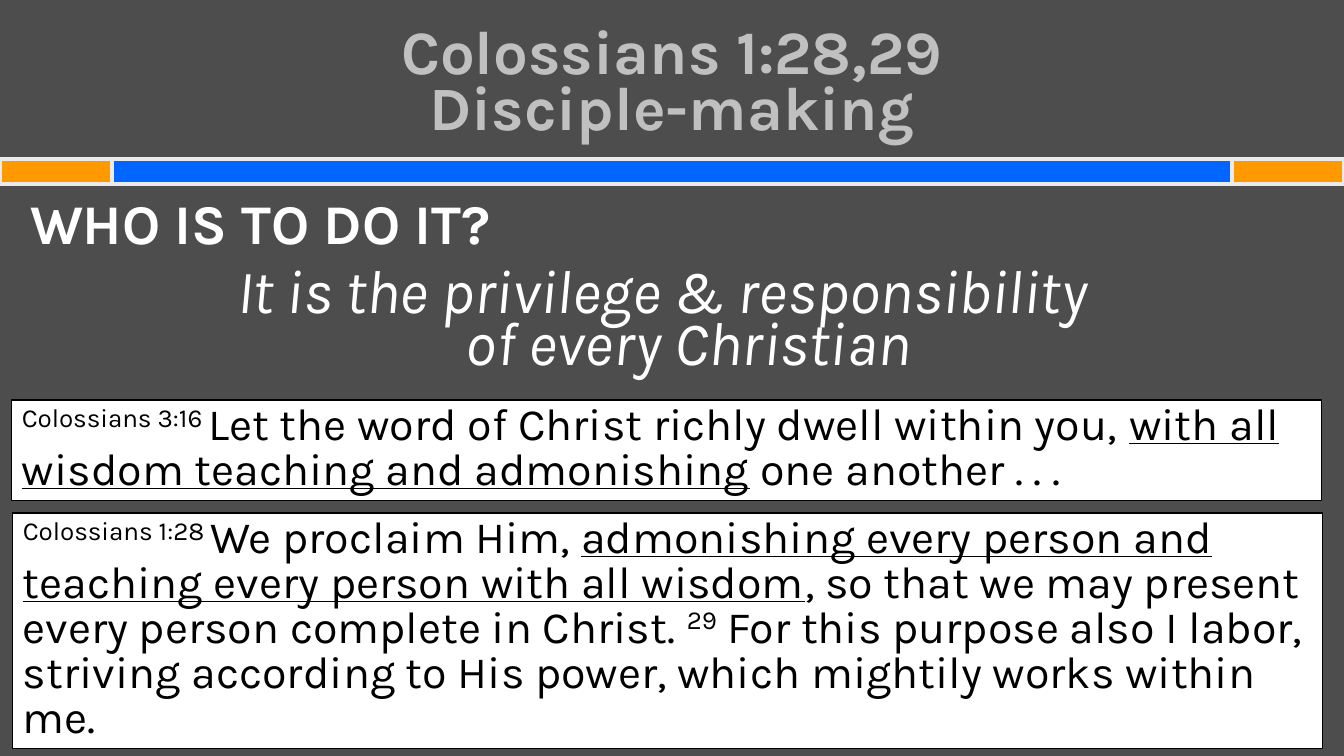
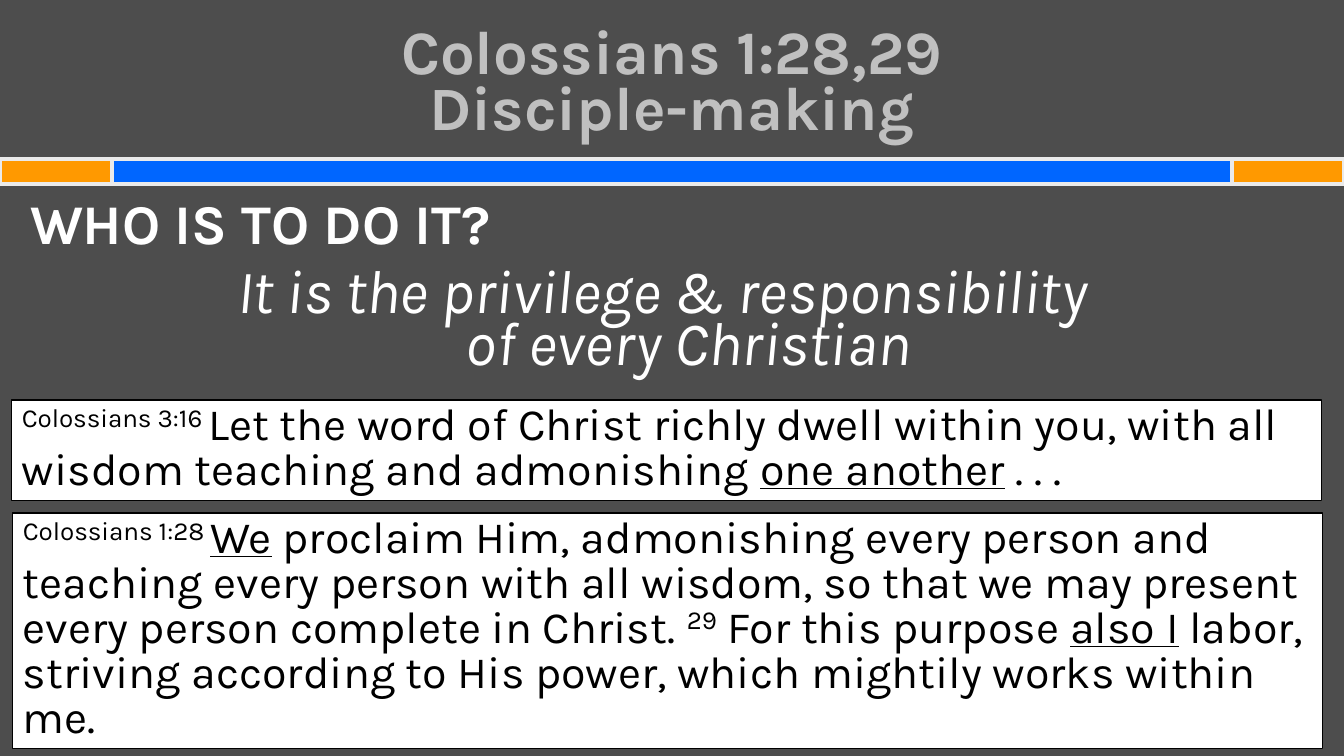
"""Build two slides about who is to make disciples, from Colossians."""
from dataclasses import dataclass

from lxml import etree
from pptx import Presentation
from pptx.dml.color import RGBColor
from pptx.enum.shapes import MSO_SHAPE
from pptx.enum.text import MSO_ANCHOR, MSO_AUTO_SIZE, PP_ALIGN
from pptx.oxml.ns import qn
from pptx.util import Emu, Pt

RECTANGLE = MSO_SHAPE.RECTANGLE
LEFT, CENTER = PP_ALIGN.LEFT, PP_ALIGN.CENTER
TOP, MIDDLE = MSO_ANCHOR.TOP, MSO_ANCHOR.MIDDLE
NO_FIT, GROW = MSO_AUTO_SIZE.NONE, MSO_AUTO_SIZE.SHAPE_TO_FIT_TEXT

EMU_PER_PX = 914400 / 100.8
SLIDE_WIDTH, SLIDE_HEIGHT = 1344, 756
FONT = "Karla"
GREY, SILVER, PALE = "4D4D4D", "C0C0C0", "EAEAEA"
BLUE, ORANGE = "0066FF", "FF9900"
WHITE, BLACK = "FFFFFF", "000000"
CORNER_WIDTH = 112
HANGING = 38


@dataclass(frozen=True)
class Box:
    left: int
    top: int
    width: int
    height: int


@dataclass(frozen=True)
class Line:
    text: str
    size: int
    align: PP_ALIGN
    bold: bool = False
    italic: bool = False


@dataclass(frozen=True)
class Span:
    text: str
    underline: bool = False
    raised: bool = False


@dataclass(frozen=True)
class Band:
    box: Box
    fill: str


@dataclass(frozen=True)
class Verse:
    box: Box
    spans: tuple[Span, ...]


TITLE = "Colossians 1:28,29\nDisciple-making"
TITLE_BOX = Box(67, 30, 1210, 113)
BODY_BOX = Box(20, 202, 1299, 537)
BODY = (
    Line("WHO IS TO DO IT?", 40, LEFT, bold=True),
    Line("It is the privilege & responsibility \nof every Christian", 44, CENTER, italic=True),
)
BANDS = (
    Band(Box(0, 159, SLIDE_WIDTH, 25), BLUE),
    Band(Box(0, 159, CORNER_WIDTH, 25), ORANGE),
    Band(Box(SLIDE_WIDTH - CORNER_WIDTH, 159, CORNER_WIDTH, 25), ORANGE),
)
PROCLAIM_BOX = Box(13, 513, 1310, 236)
DWELL_BOX = Box(12, 400, 1310, 101)
PROCLAIM_LABEL = Span("Colossians 1:28 ", raised=True)
DWELL_LABEL = Span("Colossians 3:16 ", raised=True)
VERSE_29 = Span("29", raised=True)

SLIDES = (
    (
        Verse(PROCLAIM_BOX, (
            PROCLAIM_LABEL,
            Span("We proclaim Him, "),
            Span("admonishing every person and teaching every person with all wisdom", underline=True),
            Span(", so that we may present every person complete in Christ. "),
            VERSE_29,
            Span(" For this purpose also I labor, striving according to His power, "
                 "which mightily works within me."),
        )),
        Verse(DWELL_BOX, (
            DWELL_LABEL,
            Span("Let the word of Christ richly dwell within you, "),
            Span("with all wisdom teaching and admonishing", underline=True),
            Span(" one another . . ."),
        )),
    ),
    (
        Verse(PROCLAIM_BOX, (
            PROCLAIM_LABEL,
            Span("We", underline=True),
            Span(" proclaim Him, admonishing every person and teaching every person with all wisdom, "
                 "so that we may present every person complete in Christ. "),
            VERSE_29,
            Span(" For this purpose "),
            Span("also I", underline=True),
            Span(" labor, striving according to His power, which mightily works within me."),
        )),
        Verse(DWELL_BOX, (
            DWELL_LABEL,
            Span("Let the word of Christ richly dwell within you, "
                 "with all wisdom teaching and admonishing "),
            Span("one another", underline=True),
            Span(" . . ."),
        )),
    ),
)


def px(length: int) -> Emu:
    """Turn px into EMU."""
    return Emu(round(length * EMU_PER_PX))


def color(value: str) -> RGBColor:
    """Turn a hex string into a colour."""
    return RGBColor.from_string(value)


def place(shape, box: Box) -> None:
    """Move and size a shape."""
    shape.left, shape.top = px(box.left), px(box.top)
    shape.width, shape.height = px(box.width), px(box.height)


def style_font(font, size: int, fill: str, bold: bool = False, italic: bool = False) -> None:
    """Set the typeface, size, colour and weight of a font."""
    font.name, font.size = FONT, Pt(size)
    font.bold, font.italic = bold, italic
    font.color.rgb = color(fill)


def prepare_frame(frame, anchor: MSO_ANCHOR, fit: MSO_AUTO_SIZE) -> None:
    """Set wrapping, anchor and fitting of a text frame."""
    frame.word_wrap = True
    frame.vertical_anchor = anchor
    frame.auto_size = fit


def add_rectangle(slide, box: Box, fill: str, line: str, line_width: float):
    """Add a flat outlined rectangle."""
    shape = slide.shapes.add_shape(RECTANGLE, 0, 0, 0, 0)
    place(shape, box)
    shape.shadow.inherit = False
    shape.fill.solid()
    shape.fill.fore_color.rgb = color(fill)
    shape.line.color.rgb = color(line)
    shape.line.width = Pt(line_width)
    return shape


def dress_master(presentation, slide) -> None:
    """Give the master its background and its bands."""
    master = presentation.slide_master
    master.background.fill.solid()
    master.background.fill.fore_color.rgb = color(GREY)
    for index, band in enumerate(BANDS):
        shape = add_rectangle(slide, band.box, band.fill, PALE, 3)
        shape.name = f"Band {index + 1}"
        master.shapes.element.insert(2 + index, shape.element)


def fill_title(title) -> None:
    """Write the title."""
    place(title, TITLE_BOX)
    prepare_frame(title.text_frame, MIDDLE, NO_FIT)
    paragraph = title.text_frame.paragraphs[0]
    paragraph.text = TITLE
    paragraph.alignment = CENTER
    paragraph.line_spacing = Pt(40)
    for run in paragraph.runs:
        style_font(run.font, 44, SILVER, bold=True)


def format_body_paragraph(paragraph) -> None:
    """Set a hanging indent, proportional spacing and no bullet."""
    paragraph.line_spacing = 0.7
    properties = paragraph._p.get_or_add_pPr()
    properties.set("marL", str(px(HANGING)))
    properties.set("indent", str(-px(HANGING)))
    before = etree.SubElement(properties, qn("a:spcBef"))
    etree.SubElement(before, qn("a:spcPct")).set("val", "30000")
    etree.SubElement(properties, qn("a:buNone"))


def fill_body(body) -> None:
    """Write the question and its answer."""
    place(body, BODY_BOX)
    frame = body.text_frame
    prepare_frame(frame, TOP, NO_FIT)
    for index, line in enumerate(BODY):
        paragraph = frame.add_paragraph() if index else frame.paragraphs[0]
        paragraph.text = line.text
        paragraph.alignment = line.align
        format_body_paragraph(paragraph)
        for run in paragraph.runs:
            style_font(run.font, line.size, WHITE, line.bold, line.italic)


def add_verse(slide, verse: Verse) -> None:
    """Add a white box with a verse."""
    shape = add_rectangle(slide, verse.box, WHITE, BLACK, 0.75)
    prepare_frame(shape.text_frame, TOP, GROW)
    paragraph = shape.text_frame.paragraphs[0]
    paragraph.alignment = LEFT
    paragraph.line_spacing = Pt(32)
    for span in verse.spans:
        run = paragraph.add_run()
        run.text = span.text
        style_font(run.font, 32, BLACK)
        run.font.underline = span.underline
        if span.raised:
            run._r.get_or_add_rPr().set("baseline", "30000")


def main() -> None:
    """Build and save the presentation."""
    presentation = Presentation()
    presentation.slide_width, presentation.slide_height = px(SLIDE_WIDTH), px(SLIDE_HEIGHT)
    layout = presentation.slide_layouts.get_by_name("Title and Content")
    for index, verses in enumerate(SLIDES):
        slide = presentation.slides.add_slide(layout)
        if index == 0:
            dress_master(presentation, slide)
        fill_title(slide.shapes.title)
        fill_body(slide.placeholders[1])
        for verse in verses:
            add_verse(slide, verse)
    presentation.save("out.pptx")


if __name__ == "__main__":
    main()
